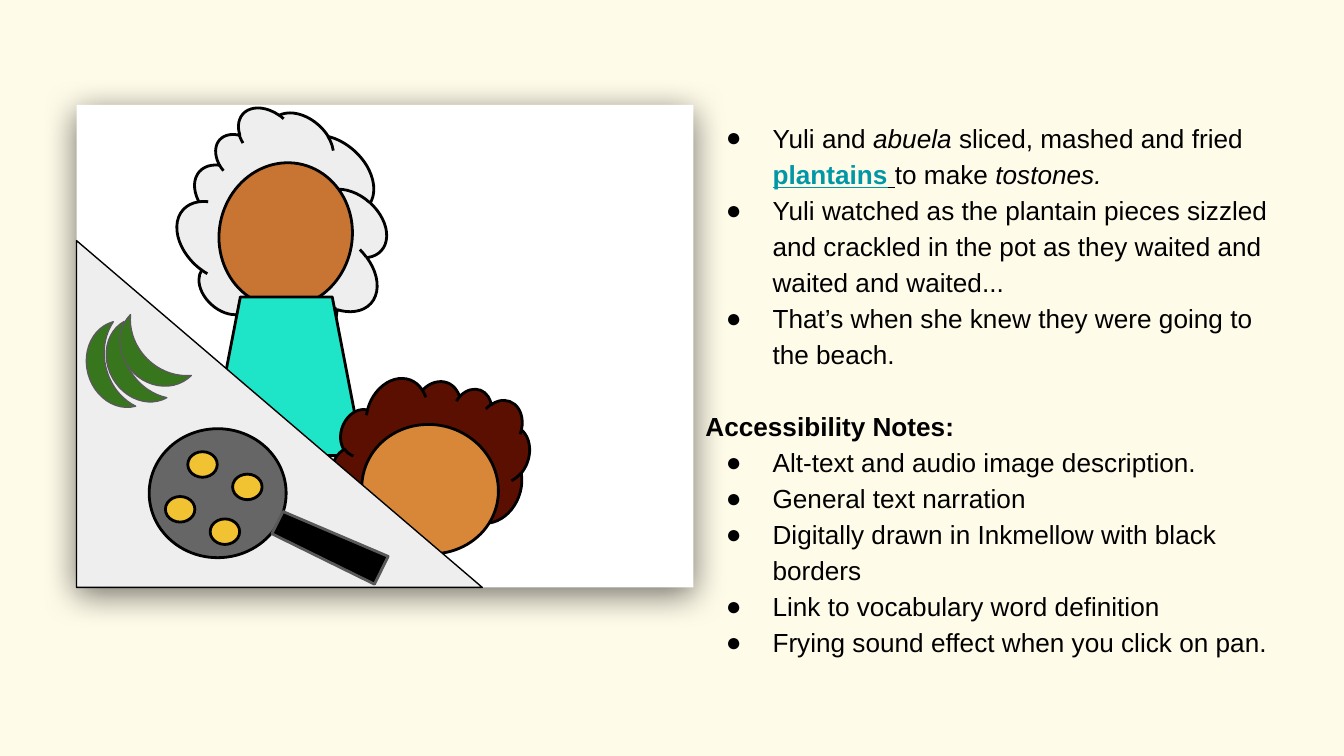
from lxml.etree import SubElement
from pptx import Presentation
from pptx.dml.color import RGBColor
from pptx.enum.shapes import MSO_SHAPE
from pptx.oxml.ns import qn
from pptx.util import Pt

CREAM = RGBColor(0xFF, 0xFB, 0xE9)
WHITE = RGBColor(0xFF, 0xFF, 0xFF)
BLACK = RGBColor(0x00, 0x00, 0x00)
LIGHT_GRAY = RGBColor(0xEE, 0xEE, 0xEE)
PAN_GRAY = RGBColor(0x66, 0x66, 0x66)
DARK_GRAY = RGBColor(0x59, 0x59, 0x59)
TAN = RGBColor(0xC8, 0x74, 0x33)
LIGHT_TAN = RGBColor(0xD7, 0x87, 0x37)
TURQUOISE = RGBColor(0x1E, 0xE5, 0xC7)
BROWN = RGBColor(0x5B, 0x0F, 0x00)
YELLOW = RGBColor(0xF1, 0xC2, 0x32)
GREEN = RGBColor(0x38, 0x76, 0x1D)
TEAL = RGBColor(0x00, 0x97, 0xA7)

STORY = [
    [("Yuli and ", ""), ("abuela", "i"), (" sliced, mashed and fried ", ""),
     ("plantains", "link"), (" ", "u"), ("to make ", ""), ("tostones.", "i")],
    [("Yuli watched as the plantain pieces sizzled and crackled in the pot "
      "as they waited and waited and waited...", "")],
    [("That’s when she knew they were going to the beach.", "")],
]
NOTES = [
    "Alt-text and audio image description.",
    "General text narration",
    "Digitally drawn in Inkmellow with black borders",
    "Link to vocabulary word definition",
    "Frying sound effect when you click on pan.",
]


class SlideBuilder:
    font_name = "Arial"
    font_size = Pt(14)
    line_spacing = 1.15

    def __init__(self, slide):
        self.slide = slide

    def background(self, color):
        fill = self.slide.background.fill
        fill.solid()
        fill.fore_color.rgb = color

    def group(self):
        return self.slide.shapes.add_group_shape()

    def shape(self, kind, box, color, line=BLACK, weight=1.5, rotation=0, group=None):
        """Draw a preset shape, inside the group if one is given."""
        shapes = (group or self.slide).shapes
        shape = shapes.add_shape(kind, *[Pt(length) for length in box])
        shape.shadow.inherit = False
        shape.rotation = rotation
        shape.fill.solid()
        shape.fill.fore_color.rgb = color
        if line is None:
            shape.line.fill.background()
        else:
            shape.line.color.rgb = line
            shape.line.width = Pt(weight)
        return shape

    def drop_shadow(self, shape, color, opacity, blur, distance):
        """Give the shape a soft shadow straight below it."""
        effects = shape._element.spPr.find(qn("a:effectLst"))
        shadow = SubElement(effects, qn("a:outerShdw"), blurRad=str(Pt(blur)),
                            dist=str(Pt(distance)), dir="5400000",
                            algn="bl", rotWithShape="0")
        tint = SubElement(shadow, qn("a:srgbClr"), val=str(color))
        SubElement(tint, qn("a:alpha"), val=str(opacity * 1000))

    def text_box(self, box):
        frame = self.slide.shapes.add_textbox(*[Pt(length) for length in box]).text_frame
        frame.word_wrap = True
        frame.margin_left = frame.margin_right = Pt(7.2)
        frame.margin_top = frame.margin_bottom = Pt(7.2)
        return frame

    def paragraph(self, frame, runs, bullet=True, space_before=0):
        paragraph = frame.paragraphs[0]
        if paragraph.runs:
            paragraph = frame.add_paragraph()
        paragraph.line_spacing = self.line_spacing
        paragraph.space_before = Pt(space_before)
        if bullet:
            self.bullet(paragraph)
        for text, style in runs:
            run = paragraph.add_run()
            run.text = text
            font = run.font
            font.name = self.font_name
            font.size = self.font_size
            font.color.rgb = TEAL if style == "link" else BLACK
            font.bold = style in ("b", "link")
            font.italic = style == "i"
            font.underline = style in ("u", "link")

    def bullet(self, paragraph):
        properties = paragraph._p.get_or_add_pPr()
        properties.set("marL", str(Pt(36)))
        properties.set("indent", str(-Pt(25)))
        color = SubElement(properties, qn("a:buClr"))
        SubElement(color, qn("a:srgbClr"), val=str(BLACK))
        SubElement(properties, qn("a:buFont"), typeface=self.font_name)
        SubElement(properties, qn("a:buChar"), char="●")


def draw_people(builder):
    grandmother = builder.group()
    builder.shape(MSO_SHAPE.CLOUD, (97.2, 64.1, 112.3, 118.8), LIGHT_GRAY,
                  rotation=311.9, group=grandmother)
    builder.shape(MSO_SHAPE.FLOWCHART_CONNECTOR, (117.4, 87.1, 71.3, 77.8), TAN,
                  rotation=10.2, group=grandmother)
    builder.shape(MSO_SHAPE.FLOWCHART_MANUAL_OPERATION, (112.3, 159.1, 82.1, 85),
                  TURQUOISE, rotation=180)
    girl = builder.group()
    builder.shape(MSO_SHAPE.CLOUD, (179.3, 201.6, 101.5, 95), BROWN,
                  rotation=21, group=girl)
    builder.shape(MSO_SHAPE.FLOWCHART_CONNECTOR, (193.7, 227.5, 73.4, 69.1), LIGHT_TAN,
                  rotation=12.8, group=girl)


def draw_text(builder):
    frame = builder.text_box((370.8, 55.8, 330.5, 321.1))
    for runs in STORY:
        builder.paragraph(frame, runs)
    builder.paragraph(frame, [("Accessibility Notes:", "b")], bullet=False,
                      space_before=19.3)
    for note in NOTES:
        builder.paragraph(frame, [(note, "")])


def draw_table_top(builder):
    builder.shape(MSO_SHAPE.RIGHT_TRIANGLE, (41, 128.9, 217.4, 185.8), LIGHT_GRAY,
                  weight=0.75)
    builder.shape(MSO_SHAPE.OVAL, (79.9, 229.7, 73.4, 69.1), PAN_GRAY)
    builder.shape(MSO_SHAPE.FLOWCHART_MANUAL_INPUT, (146.2, 283.7, 61.2, 16.6), BLACK,
                  line=DARK_GRAY, rotation=26.2)
    for left, top in ((100.6, 242), (124.6, 254), (88.6, 266), (112.6, 278)):
        builder.shape(MSO_SHAPE.OVAL, (left, top, 15.8, 13.7), YELLOW)
    plantains = (
        ((59, 174.2, 20.2, 46.8), 330.7),
        ((68.4, 169.2, 20.9, 46.1), 315),
        ((46.8, 174.2, 20.2, 46.8), 345.2),
    )
    for box, rotation in plantains:
        builder.shape(MSO_SHAPE.MOON, box, GREEN, line=DARK_GRAY, weight=0.75,
                      rotation=rotation)


def main():
    presentation = Presentation()
    presentation.slide_width = Pt(720)
    presentation.slide_height = Pt(405)
    blank_layout = presentation.slide_layouts[6]
    builder = SlideBuilder(presentation.slides.add_slide(blank_layout))
    builder.background(CREAM)
    card = builder.shape(MSO_SHAPE.ROUNDED_RECTANGLE, (41, 56.2, 330.5, 258.5), WHITE,
                         line=None)
    card.adjustments[0] = 0
    builder.drop_shadow(card, BLACK, opacity=55, blur=18, distance=4)
    draw_people(builder)
    draw_text(builder)
    draw_table_top(builder)
    presentation.save("out.pptx")


if __name__ == "__main__":
    main()
